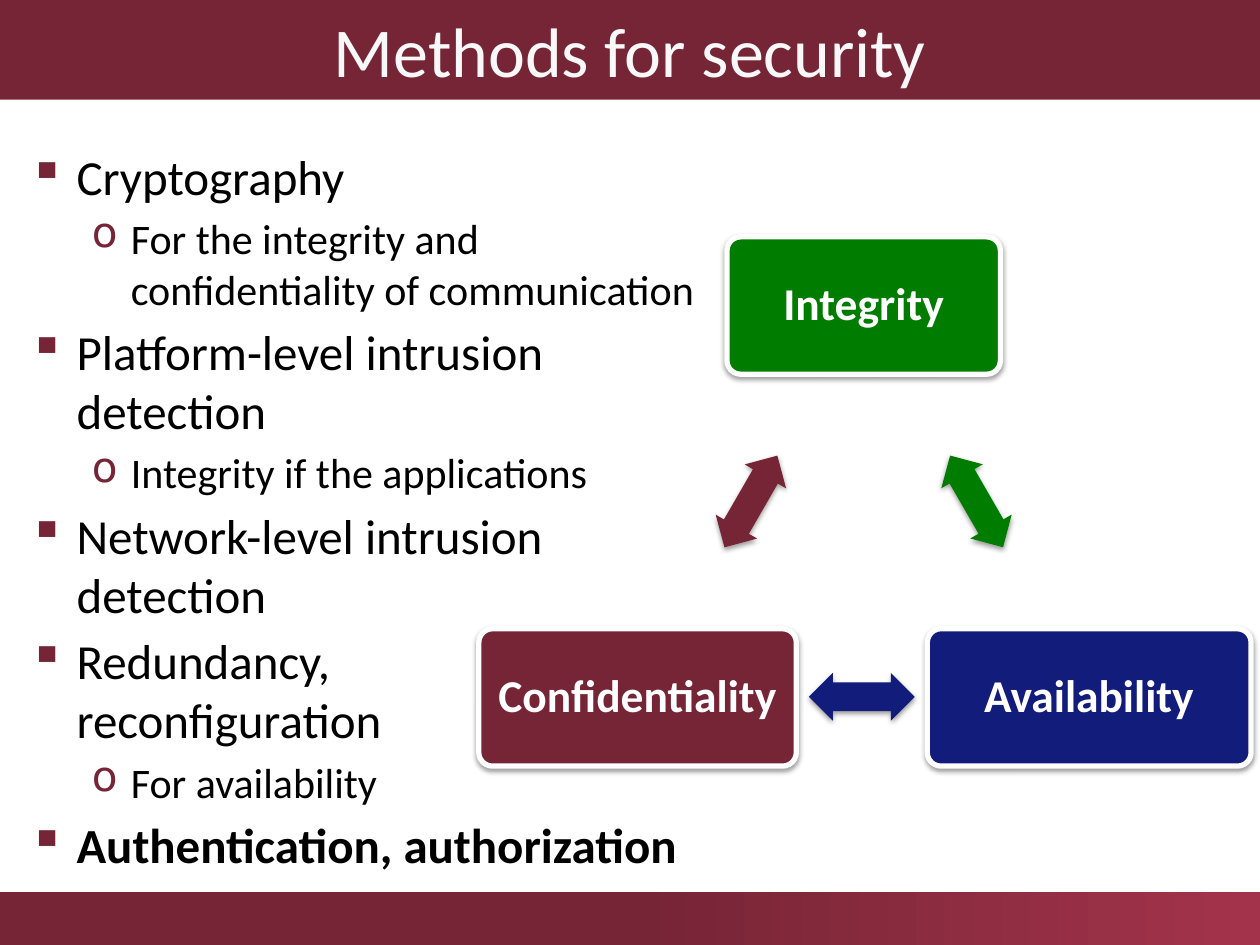
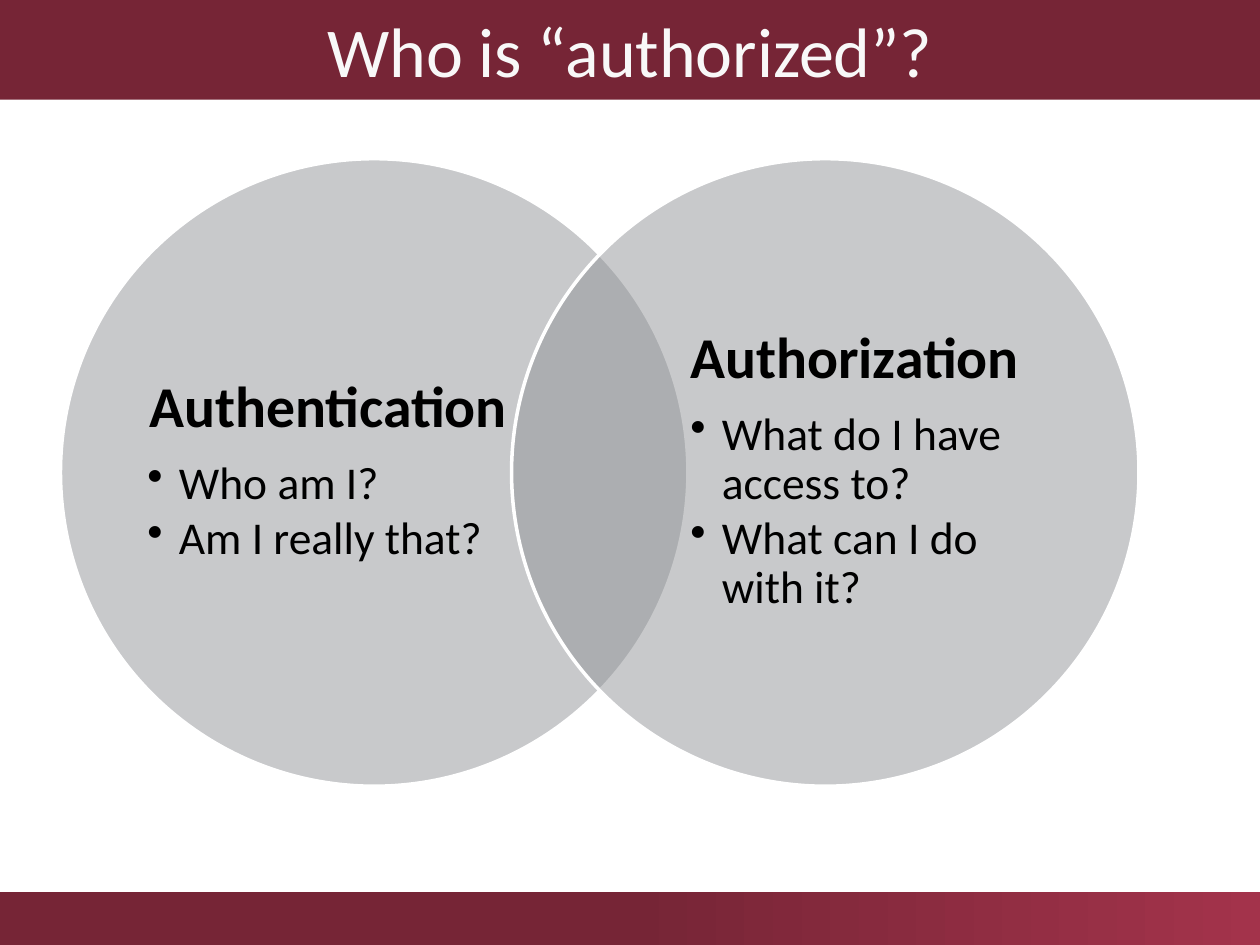
from dataclasses import dataclass

from lxml.etree import SubElement
from pptx import Presentation
from pptx.dml.color import RGBColor
from pptx.enum.shapes import MSO_SHAPE
from pptx.enum.text import MSO_ANCHOR, PP_ALIGN
from pptx.oxml.ns import qn
from pptx.util import Inches, Pt


@dataclass(frozen=True)
class Theme:
    font: str = "Calibri"
    maroon: str = "762536"
    rose: str = "A3334B"
    title_text: str = "F8F8F8"
    black: str = "000000"
    white: str = "FFFFFF"
    green: str = "007D00"
    navy: str = "111C7B"
    gray: str = "929598"
    title_size: int = 40
    heading_size: int = 33
    body_size: int = 28
    label_size: int = 26
    sub_size: int = 24


THEME = Theme()


class Deck:
    def __init__(self, theme):
        self.theme = theme
        self.presentation = Presentation()
        self.presentation.slide_width = Inches(10)
        self.presentation.slide_height = Inches(7.5)
        self.slide = None

    def new_slide(self, title):
        """Start a slide with the footer band and the title band."""
        theme = self.theme
        self.slide = self.presentation.slides.add_slide(self.presentation.slide_layouts[6])
        footer = self.shape(MSO_SHAPE.RECTANGLE, 0, 7.08, 10, 0.42, theme.maroon)
        footer.fill.gradient()
        footer.fill.gradient_angle = 0
        stops = ((0.5, theme.maroon), (1, theme.rose))
        for stop, (position, color) in zip(footer.fill.gradient_stops, stops):
            stop.position = position
            stop.color.rgb = RGBColor.from_string(color)
        band = self.shape(MSO_SHAPE.RECTANGLE, 0, 0, 10, 0.79, theme.maroon)
        self.centered(band, title, theme.title_size, theme.title_text)

    def shape(self, kind, left, top, width, height, fill, line=None, adjustments=()):
        shape = self.slide.shapes.add_shape(
            kind, Inches(left), Inches(top), Inches(width), Inches(height))
        shape.shadow.inherit = False
        shape.fill.solid()
        shape.fill.fore_color.rgb = RGBColor.from_string(fill)
        if line:
            shape.line.color.rgb = RGBColor.from_string(self.theme.white)
            shape.line.width = Pt(line)
        else:
            shape.line.fill.background()
        for index, value in enumerate(adjustments):
            shape.adjustments[index] = value
        return shape

    def add_shadow(self, shape):
        effects = shape._element.spPr.find(qn("a:effectLst"))
        shadow = SubElement(effects, qn("a:outerShdw"), blurRad=str(Pt(3.1)),
                            dist=str(Pt(1.6)), dir="5400000", rotWithShape="0")
        color = SubElement(shadow, qn("a:srgbClr"), val=self.theme.black)
        SubElement(color, qn("a:alpha"), val="38000")

    def style(self, paragraph, size, color, bold=False):
        font = paragraph.font
        font.name, font.size, font.bold = self.theme.font, Pt(size), bold
        font.color.rgb = RGBColor.from_string(color)

    def centered(self, shape, text, size, color, bold=False):
        frame = shape.text_frame
        frame.word_wrap = True
        frame.vertical_anchor = MSO_ANCHOR.MIDDLE
        paragraph = frame.paragraphs[0]
        paragraph.text = text
        paragraph.alignment = PP_ALIGN.CENTER
        self.style(paragraph, size, color, bold)

    def goal_box(self, text, left, top, width, fill):
        box = self.shape(MSO_SHAPE.ROUNDED_RECTANGLE, left, top, width, 1.09, fill, 3, (0.1,))
        self.add_shadow(box)
        self.centered(box, text, self.theme.label_size, self.theme.white, True)
        box.text_frame.margin_left = box.text_frame.margin_right = Inches(0.11)
        box.text_frame.paragraphs[0].line_spacing = 0.9

    def double_arrow(self, left, top, rotation, fill):
        arrow = self.shape(MSO_SHAPE.LEFT_RIGHT_ARROW, left, top, 0.84, 0.38, fill,
                           adjustments=(0.6, 0.5))
        arrow.rotation = rotation
        self.add_shadow(arrow)

    def text_box(self, left, top, width, height):
        box = self.slide.shapes.add_textbox(
            Inches(left), Inches(top), Inches(width), Inches(height))
        box.text_frame.word_wrap = True
        return box.text_frame

    def paragraphs(self, frame, texts):
        """Yield one paragraph of the frame for each text."""
        for index, text in enumerate(texts):
            paragraph = frame.add_paragraph() if index else frame.paragraphs[0]
            paragraph.text = text
            yield index, paragraph

    def bullet(self, paragraph, char, margin, hanging, color):
        properties = paragraph._p.get_or_add_pPr()
        properties.set("marL", str(Inches(margin)))
        properties.set("indent", str(-Inches(hanging)))
        bullet_color = SubElement(properties, qn("a:buClr"))
        SubElement(bullet_color, qn("a:srgbClr"), val=color)
        SubElement(properties, qn("a:buChar"), char=char)

    def outline(self, items, left, top, width, height):
        """Two-level list of (level, text, bold)."""
        theme = self.theme
        levels = (("▪", 0.38, 0.38, theme.body_size), ("o", 0.81, 0.31, theme.sub_size))
        frame = self.text_box(left, top, width, height)
        for index, paragraph in self.paragraphs(frame, [text for _, text, _ in items]):
            level, _, bold = items[index]
            char, margin, hanging, size = levels[level]
            paragraph.level = level
            paragraph.space_before = Pt(4.5 if index else 0)
            self.bullet(paragraph, char, margin, hanging, theme.maroon)
            self.style(paragraph, size, theme.black, bold)

    def venn_circle(self, left, top, diameter):
        circle = self.shape(MSO_SHAPE.OVAL, left, top, diameter, diameter, self.theme.gray, 2)
        color = circle._element.spPr.find(qn("a:solidFill"))[0]
        SubElement(color, qn("a:alpha"), val="50000")

    def venn_text(self, heading, questions, left, alignment):
        theme = self.theme
        frame = self.text_box(left, 1.84, 2.87, 3.8)
        frame.vertical_anchor = MSO_ANCHOR.MIDDLE
        frame.margin_left = frame.margin_right = frame.margin_top = frame.margin_bottom = 0
        for index, paragraph in self.paragraphs(frame, [heading, *questions]):
            paragraph.line_spacing = 0.9
            if index:
                paragraph.level = 1
                paragraph.space_after = Pt(3.5)
                self.bullet(paragraph, "•", 0.25, 0.25, theme.black)
                self.style(paragraph, theme.label_size, theme.black)
            else:
                paragraph.alignment = alignment
                paragraph.space_after = Pt(11.5)
                self.style(paragraph, theme.heading_size, theme.black, True)


def security_methods(deck):
    deck.new_slide("Methods for security")
    deck.outline([
        (0, "Cryptography", False),
        (1, "For the integrity and confidentiality of communication", False),
        (0, "Platform-level intrusion detection", False),
        (1, "Integrity if the applications", False),
        (0, "Network-level intrusion detection", False),
        (0, "Redundancy,\vreconfiguration", False),
        (1, "For availability", False),
        (0, "Authentication, authorization", True),
    ], 0.13, 1.11, 5.65, 6.03)

    # Cycle of security goals, each with the arrow to the next one
    goals = [
        ("Integrity", (5.77, 1.88, 2.17), (7.33, 3.79, 60), THEME.green),
        ("Availability", (7.36, 4.99, 2.57), (6.42, 5.34, 180), THEME.navy),
        ("Confidentiality", (3.8, 4.99, 2.52), (5.54, 3.79, 300), THEME.maroon),
    ]
    for goal, box, arrow, color in goals:
        deck.goal_box(goal, *box, color)
        deck.double_arrow(*arrow, color)


def authorized_users(deck):
    deck.new_slide("Who is “authorized”?")

    # Two overlapping circles with their questions
    concepts = [
        ("Authentication", ["Who am I?", "Am I really that?"], 1.17, PP_ALIGN.CENTER),
        ("Authorization", ["What do I have access to?", "What can I do with it?"],
         5.48, PP_ALIGN.LEFT),
    ]
    for index, concept in enumerate(concepts):
        deck.venn_circle(0.48 + 3.58 * index, 1.26, 4.98)
        deck.venn_text(*concept)


def main():
    deck = Deck(THEME)
    security_methods(deck)
    authorized_users(deck)
    deck.presentation.save("out.pptx")


if __name__ == "__main__":
    main()
